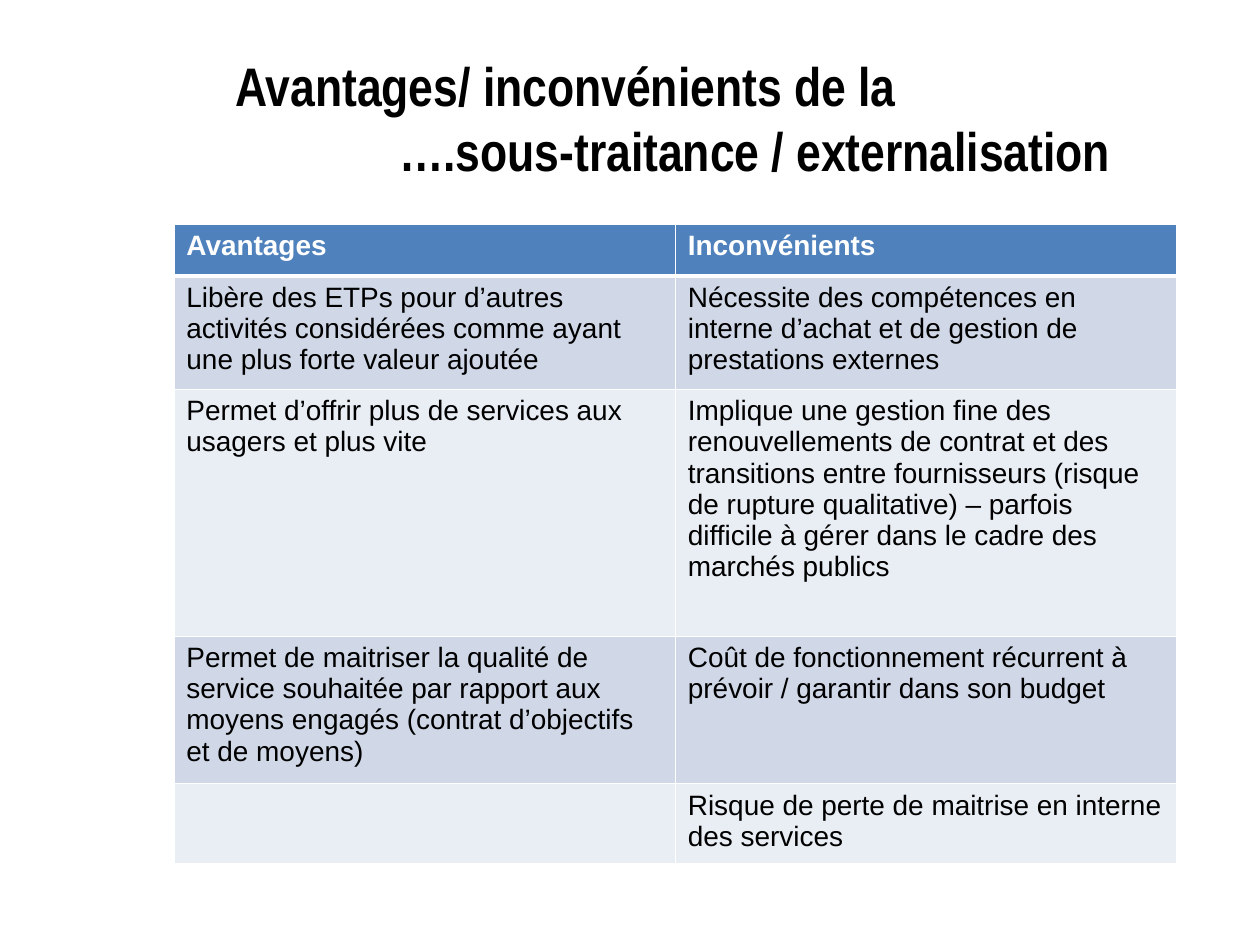
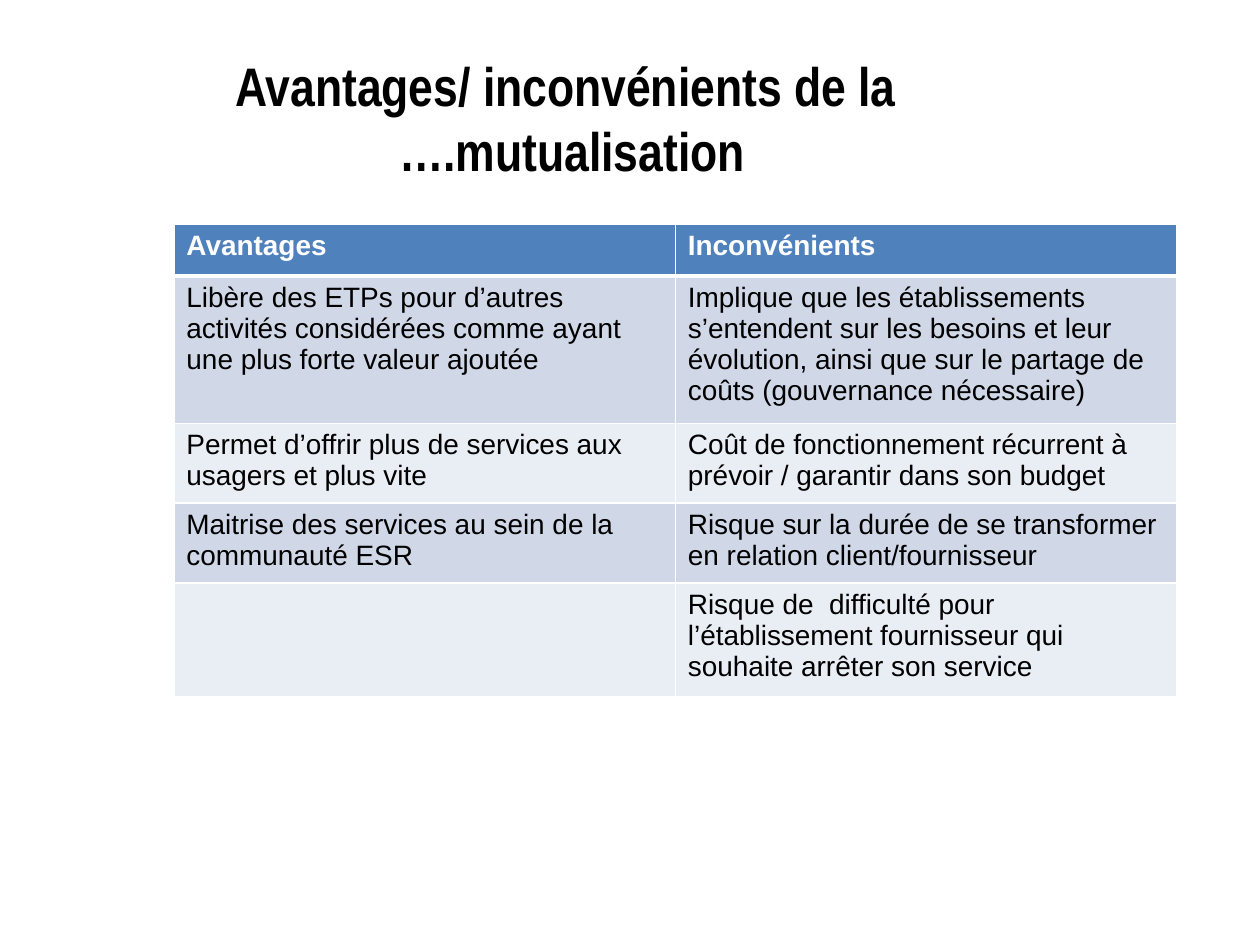
from lxml.etree import SubElement
from pptx import Presentation
from pptx.dml.color import RGBColor
from pptx.enum.text import MSO_ANCHOR as Anchor
from pptx.oxml.ns import qn
from pptx.util import Inches, Pt

TITLE_START = "Avantages/ inconvénients de la"
HEADINGS = ("Avantages", "Inconvénients")
COMPARISONS = [
    {
        "topic": "….sous-traitance / externalisation",
        "rows": [
            ("Libère des ETPs pour d’autres activités considérées comme ayant une plus forte valeur ajoutée",
             "Nécessite des compétences en interne d’achat et de gestion de prestations externes"),
            ("Permet d’offrir plus de services aux usagers et plus vite",
             "Implique une gestion fine des renouvellements de contrat et des transitions entre fournisseurs "
             "(risque de rupture qualitative) – parfois difficile à gérer dans le cadre des marchés publics"),
            ("Permet de maitriser la qualité de service souhaitée par rapport aux moyens engagés "
             "(contrat d’objectifs et de moyens)",
             "Coût de fonctionnement récurrent à prévoir / garantir dans son budget"),
            ("", "Risque de perte de maitrise en interne des services"),
        ],
        "heights": (0.9, 1.96, 1.17, 0.63),
    },
    {
        "topic": "….mutualisation",
        "rows": [
            ("Libère des ETPs pour d’autres activités considérées comme ayant une plus forte valeur ajoutée",
             "Implique que les établissements s’entendent sur les besoins et leur évolution, "
             "ainsi que sur le partage de coûts (gouvernance nécessaire)"),
            ("Permet d’offrir plus de services aux usagers et plus vite",
             "Coût de fonctionnement récurrent à prévoir / garantir dans son budget"),
            ("Maitrise des services au sein de la communauté ESR",
             "Risque sur la durée de se transformer en relation client/fournisseur"),
            ("", "Risque de  difficulté pour l’établissement fournisseur qui souhaite arrêter son service"),
        ],
        "heights": (1.17, 0.63, 0.63, 0.9),
    },
]

BLACK, WHITE = "000000", "FFFFFF"
HEADING_FILL = "4F81BD"
BAND_FILLS = ("D0D8E8", "E9EDF4")
TITLE_FONT = {"name": "Arial Narrow", "size": Pt(31), "bold": True}
HEADING_FONT = {"name": "Arial", "size": Pt(16), "bold": True}
BODY_FONT = {**HEADING_FONT, "bold": False}
HEADING_HEIGHT = 0.41
COLUMN_WIDTH = 3.98
THIN, THICK = 1, 3


def rgb(color):
    return RGBColor.from_string(color)


def write(paragraph, wording, font_values, color):
    run = paragraph.add_run()
    run.text = wording
    for attribute, value in font_values.items():
        setattr(run.font, attribute, value)
    run.font.color.rgb = rgb(color)


def add_title(slide, topic):
    title = slide.shapes.add_textbox(Inches(1.77), Inches(0.36), Inches(7.56), Inches(1.14))
    frame = title.text_frame
    frame.word_wrap = True
    frame.vertical_anchor = Anchor.MIDDLE
    write(frame.paragraphs[0], TITLE_START, TITLE_FONT, BLACK)
    topic_line = frame.add_paragraph()
    topic_line._p.get_or_add_pPr().set("marL", str(Inches(1.3)))
    write(topic_line, topic, TITLE_FONT, BLACK)


def set_borders(cell, top, bottom):
    properties = cell._tc.get_or_add_tcPr()
    for side, width in (("L", THIN), ("R", THIN), ("T", top), ("B", bottom)):
        border = SubElement(properties, qn(f"a:ln{side}"), w=str(Pt(width)))
        border_fill = SubElement(border, qn("a:solidFill"))
        SubElement(border_fill, qn("a:srgbClr"), val=WHITE)


def add_comparison(slide, rows, heights):
    lines = [HEADINGS, *rows]
    line_heights = [HEADING_HEIGHT, *heights]
    table = slide.shapes.add_table(
        len(lines), len(HEADINGS), Inches(1.38), Inches(1.78),
        Inches(COLUMN_WIDTH * len(HEADINGS)), Inches(sum(line_heights))).table
    for column in table.columns:
        column.width = Inches(COLUMN_WIDTH)
    for index, (line, height) in enumerate(zip(lines, line_heights)):
        table.rows[index].height = Inches(height)
        if index == 0:
            fill, font_values, color = HEADING_FILL, HEADING_FONT, WHITE
        else:
            fill, font_values, color = BAND_FILLS[(index - 1) % 2], BODY_FONT, BLACK
        for position, wording in enumerate(line):
            cell = table.cell(index, position)
            set_borders(cell, THICK if index == 1 else THIN, THICK if index == 0 else THIN)
            cell.fill.solid()
            cell.fill.fore_color.rgb = rgb(fill)
            if wording:
                write(cell.text_frame.paragraphs[0], wording, font_values, color)


def main():
    deck = Presentation()
    deck.slide_width, deck.slide_height = Inches(10), Inches(7.5)
    for comparison in COMPARISONS:
        slide = deck.slides.add_slide(deck.slide_layouts[6])
        add_title(slide, comparison["topic"])
        add_comparison(slide, comparison["rows"], comparison["heights"])
    deck.save("out.pptx")


if __name__ == "__main__":
    main()
